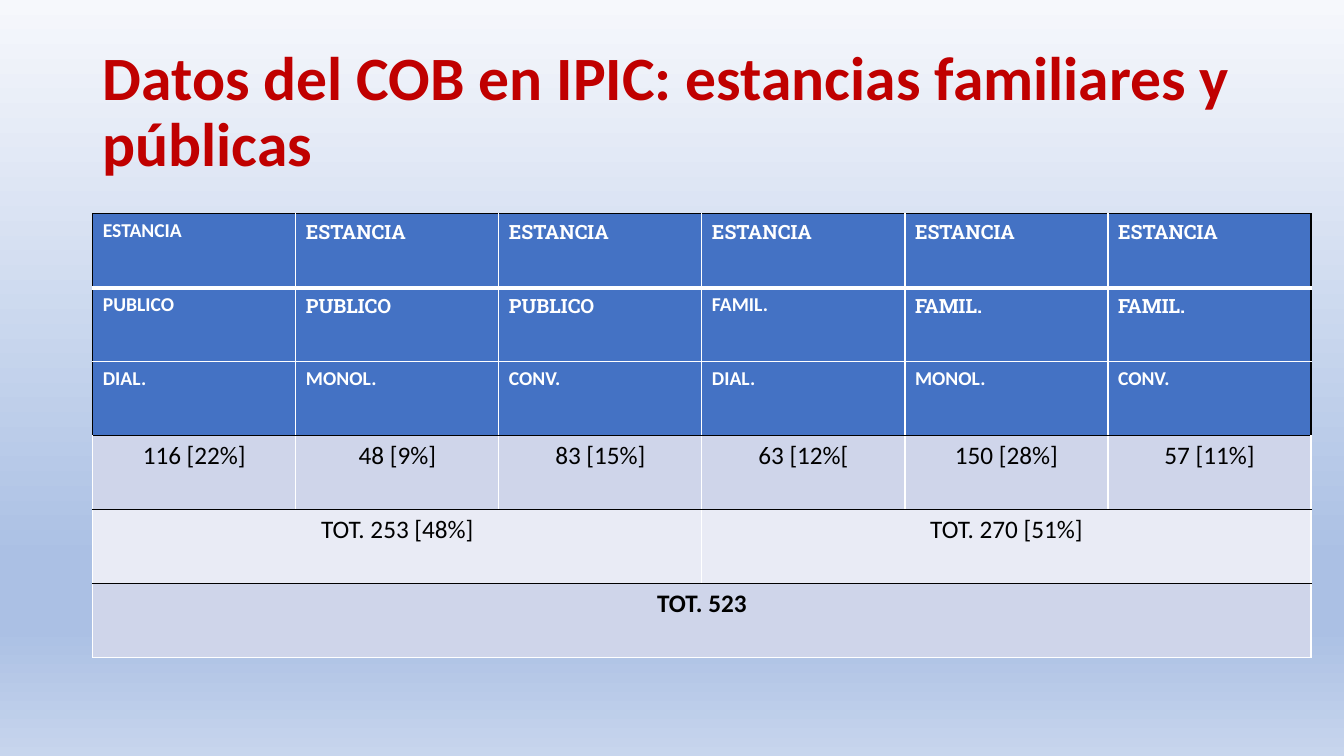
"""Slide with the COB counts of family and public stays."""
from lxml import etree
from pptx import Presentation
from pptx import util as u
from pptx.dml.color import RGBColor
from pptx.enum import text
from pptx.oxml import ns

TITLE = "Datos del COB en IPIC: estancias familiares y públicas"
HEADERS = [
    ["ESTANCIA"] * 6,
    ["PUBLICO"] * 3 + ["FAMIL."] * 3,
    ["DIAL.", "MONOL.", "CONV."] * 2,
]
COUNTS = ["116 [22%]", "48 [9%]", "83 [15%]", "63 [12%[", "150 [28%]", "57 [11%]"]
SUBTOTALS = ["TOT. 253 [48%]", "TOT. 270 [51%]"]
TOTAL = ["TOT. 523"]
SLAB_CELLS = {(0, 1), (0, 2), (0, 3), (0, 4), (0, 5), (1, 1), (1, 2), (1, 4), (1, 5)}

THEME = {
    "body": "Calibri", "slab": "Roboto Slab",
    "title_size": 44, "header_size": 14, "count_size": 18,
    "red": "C00000", "white": "FFFFFF", "black": "000000",
    "header": "4472C4", "band": "CFD5EA", "light_band": "E9EBF5",
    "sky": [(0, "F6F8FC"), (74, "ABC0E4"), (83, "ABC0E4"), (100, "C7D5ED")],
}
BLACK, WHITE = (THEME["black"], 1), (THEME["white"], 1)
ROW_LINES = [BLACK, (THEME["white"], 3), WHITE, BLACK, BLACK, BLACK, WHITE]
BANDS = [THEME["header"]] * 3 + [THEME["band"], THEME["light_band"], THEME["band"]]

TITLE_BOX = (0.92, 0.4, 11.5, 1.45)
TABLE_LEFT, TABLE_TOP = 0.92, 2.12
COLUMN_WIDTH, ROW_HEIGHT = 2.014, 0.734


def write(frame, words, *, size, color, font=THEME["body"], bold=False,
          align=text.PP_ALIGN.LEFT, spacing=None):
    """Put one formatted paragraph in a text frame."""
    paragraph = frame.paragraphs[0]
    paragraph.alignment = align
    paragraph.line_spacing = spacing
    run = paragraph.add_run()
    run.text = words
    run.font.name, run.font.size, run.font.bold = font, u.Pt(size), bold
    run.font.color.rgb = RGBColor.from_string(color)


def add_color(parent, color):
    """Append an RGB colour element."""
    etree.SubElement(parent, ns.qn("a:srgbClr"), val=color)


def paint_sky(slide):
    """Fill the background with the vertical gradient."""
    fill = slide.background.fill
    fill.gradient()
    fill.gradient_angle = 270
    stops = next(slide.element.iter(ns.qn("a:gsLst")))
    for stop in list(stops):
        stops.remove(stop)
    for position, color in THEME["sky"]:
        add_color(etree.SubElement(stops, ns.qn("a:gs"), pos=str(position * 1000)), color)


def style_cell(cell, row, column, last_column):
    """Set the fill and the four borders of a cell."""
    cell.fill.solid()
    cell.fill.fore_color.rgb = RGBColor.from_string(BANDS[row])
    in_header = row < len(HEADERS)
    borders = {
        "L": BLACK if in_header and column == 0 else WHITE,
        "R": BLACK if in_header and column == last_column else WHITE,
        "T": ROW_LINES[row],
        "B": ROW_LINES[row + 1],
    }
    properties = cell._tc.get_or_add_tcPr()
    for order, (side, (color, width)) in enumerate(borders.items()):
        line = etree.Element(ns.qn(f"a:ln{side}"), w=str(u.Pt(width)))
        add_color(etree.SubElement(line, ns.qn("a:solidFill")), color)
        properties.insert(order, line)


def add_stays(slide):
    """Build the table, spreading each row's entries over all columns."""
    rows = HEADERS + [COUNTS, SUBTOTALS, TOTAL]
    columns = len(COUNTS)
    stays = slide.shapes.add_table(
        len(rows), columns, u.Inches(TABLE_LEFT), u.Inches(TABLE_TOP),
        u.Inches(COLUMN_WIDTH * columns), u.Inches(ROW_HEIGHT * len(rows))).table
    for row, entries in enumerate(rows):
        for column in range(columns):
            style_cell(stays.cell(row, column), row, column, columns - 1)
        span = columns // len(entries)
        for index, words in enumerate(entries):
            column = index * span
            cell = stays.cell(row, column)
            if span > 1:
                cell.merge(stays.cell(row, column + span - 1))
            if row < len(HEADERS):
                font = THEME["slab" if (row, column) in SLAB_CELLS else "body"]
                write(cell.text_frame, words, size=THEME["header_size"],
                      color=THEME["white"], font=font, bold=True)
            else:
                write(cell.text_frame, words, size=THEME["count_size"],
                      color=THEME["black"], bold=entries is TOTAL,
                      align=text.PP_ALIGN.CENTER)


def main():
    """Compose and save the slide."""
    deck = Presentation()
    deck.slide_width, deck.slide_height = u.Inches(13.33), u.Inches(7.5)
    slide = deck.slides.add_slide(deck.slide_layouts[6])
    paint_sky(slide)
    heading = slide.shapes.add_textbox(*map(u.Inches, TITLE_BOX)).text_frame
    heading.word_wrap = True
    heading.vertical_anchor = text.MSO_ANCHOR.MIDDLE
    write(heading, TITLE, size=THEME["title_size"], color=THEME["red"],
          bold=True, spacing=0.9)
    add_stays(slide)
    deck.save("out.pptx")


if __name__ == "__main__":
    main()
